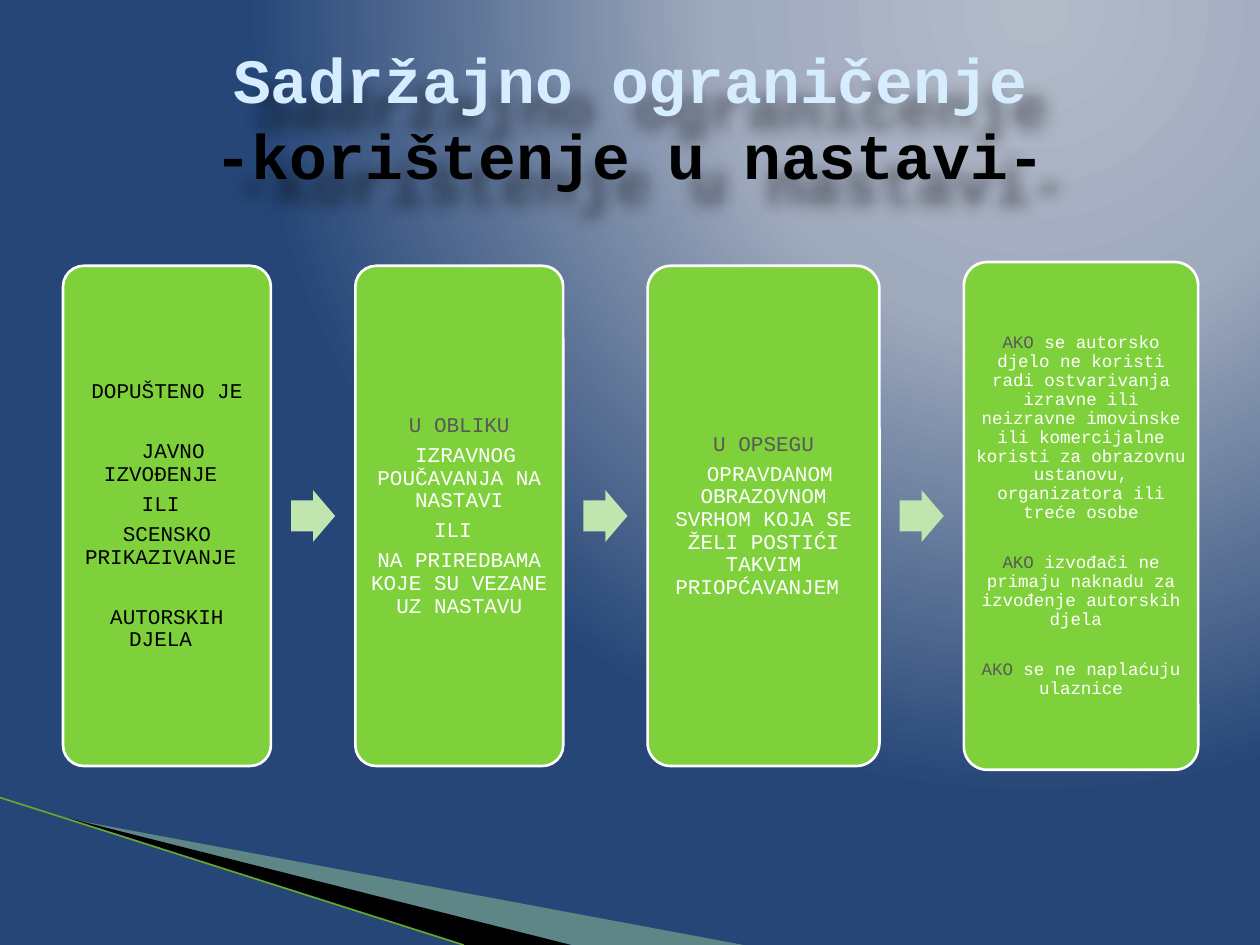
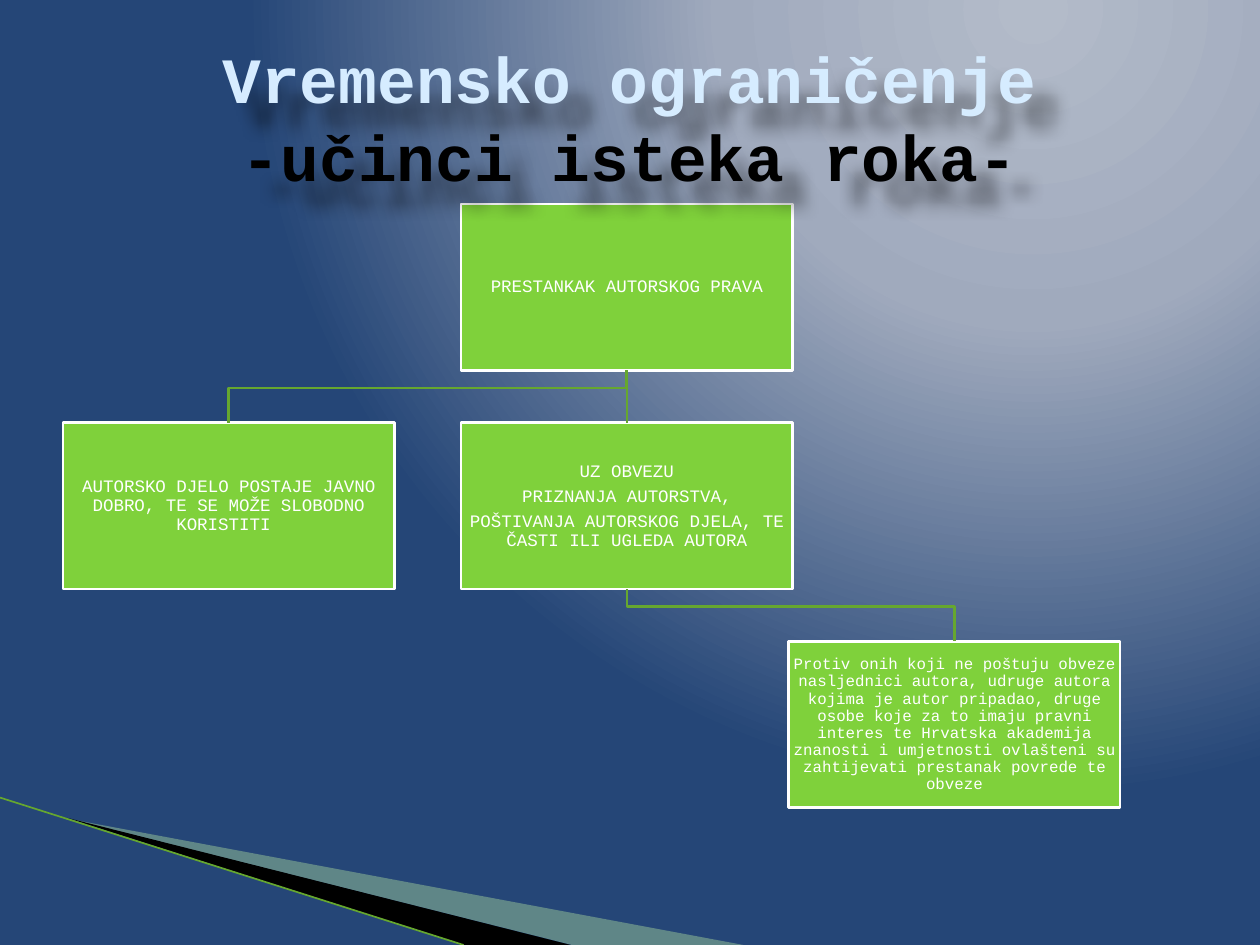
from dataclasses import dataclass
from typing import NamedTuple

from lxml.etree import SubElement
from pptx import Presentation
from pptx.dml.color import RGBColor
from pptx.enum.shapes import MSO_CONNECTOR as Connector, MSO_SHAPE as Preset
from pptx.enum.text import MSO_ANCHOR as Anchor, PP_ALIGN as Align
from pptx.oxml.ns import qn
from pptx.util import Emu, Inches, Pt


@dataclass(frozen=True)
class Theme:
    """Colours, font and type sizes of the deck."""

    font: str = "Courier New"
    sky: str = "D6ECFF"
    black: str = "000000"
    white: str = "FFFFFF"
    grey: str = "595959"
    green: str = "7FD13B"
    dark_green: str = "66A72F"
    pale_green: str = "B8E7A1"
    arrow_green: str = "C0E5AF"
    backdrop: tuple = ((0, "B3BBC9"), (40, "A0AABD"), (100, "254677"))
    body: float = 12
    small: float = 10
    tiny: float = 9
    outline: float = 1.5
    hairline: float = 0.95
    paragraph_gap: float = 0.35
    section_gap: float = 1.43


THEME = Theme()
SLIDE_WIDTH, SLIDE_HEIGHT = Inches(10), Inches(7.5)
COLUMN, ROW = SLIDE_WIDTH / 100, SLIDE_HEIGHT / 75


class Box(NamedTuple):
    """A place on the grid, in columns and rows."""

    left: float
    top: float
    width: float
    height: float

    def emu(self) -> tuple:
        """Return the place as slide lengths."""
        return (*point(self.left, self.top), *point(self.width, self.height))


class Run(NamedTuple):
    """A piece of text in one colour."""

    text: str
    color: str


@dataclass(frozen=True)
class Line:
    """A paragraph, optionally opening a new section."""

    runs: tuple
    section: bool = False


@dataclass(frozen=True)
class Card:
    """A step of the process row."""

    width: float
    height: float
    lines: tuple
    size: float = THEME.body
    inset: float = 0.05


@dataclass(frozen=True)
class Node:
    """A box of the hierarchy, placed by left column and level."""

    left: float
    level: int
    lines: tuple
    size: float = THEME.small


def plain(text: str, color: str = THEME.white, section: bool = False) -> Line:
    """Make a paragraph of one colour."""
    return Line((Run(text, color),), section)


def condition(text: str, section: bool = True) -> Line:
    """Make a paragraph that opens with a grey keyword."""
    return Line((Run("AKO", THEME.grey), Run(text, THEME.white)), section)


CARD_LEFT, CARD_MIDDLE, CARD_GAP, CARD_CORNER = 5, 40.95, 6.7, 0.1
ARROW_WIDTH, ARROW_HEIGHT = 3.5, 4.1
CARDS = (
    Card(16.5, 39.7, (
        plain("DOPUŠTENO JE", THEME.black),
        plain(" JAVNO IZVOĐENJE ", THEME.black, section=True),
        plain("ILI ", THEME.black),
        plain("SCENSKO PRIKAZIVANJE ", THEME.black),
        plain("AUTORSKIH DJELA ", THEME.black, section=True),
    )),
    Card(16.5, 39.7, (
        plain("U OBLIKU", THEME.grey),
        plain(" IZRAVNOG POUČAVANJA NA NASTAVI"),
        plain("ILI "),
        plain("NA PRIREDBAMA KOJE SU VEZANE UZ NASTAVU"),
    )),
    Card(18.4, 39.7, (
        plain("U OPSEGU", THEME.grey),
        plain(" OPRAVDANOM OBRAZOVNOM SVRHOM KOJA SE ŽELI POSTIĆI TAKVIM PRIOPĆAVANJEM "),
    )),
    Card(18.6, 40.3, (
        condition(" se autorsko djelo ne koristi radi ostvarivanja izravne ili neizravne "
                  "imovinske ili komercijalne koristi za obrazovnu ustanovu, "
                  "organizatora ili treće osobe", section=False),
        condition(" izvođači ne primaju naknadu za izvođenje autorskih djela "),
        condition(" se ne naplaćuju ulaznice"),
    ), THEME.small, 0.04),
)

NODE_WIDTH, NODE_HEIGHT, NODE_TOP, LEVEL_STEP = 26.3, 13.2, 16.2, 17.35
NODES = {
    "end": Node(36.6, 0, (plain("PRESTANKAK AUTORSKOG PRAVA"),)),
    "public": Node(5, 1, (
        plain("AUTORSKO DJELO POSTAJE JAVNO DOBRO, TE SE MOŽE SLOBODNO KORISTITI "),
    )),
    "duty": Node(36.6, 1, (
        plain("UZ OBVEZU"),
        plain(" PRIZNANJA AUTORSTVA, "),
        plain("POŠTIVANJA AUTORSKOG DJELA, TE ČASTI ILI UGLEDA AUTORA"),
    )),
    "breach": Node(62.6, 2, (
        plain("Protiv onih koji ne poštuju obveze nasljednici autora, udruge autora kojima "
              "je autor pripadao, druge osobe koje za to imaju pravni interes te Hrvatska "
              "akademija znanosti i umjetnosti ovlašteni su zahtijevati prestanak povrede "
              "te obveze"),
    ), THEME.tiny),
}
LINKS = (("duty", "breach"), ("end", "duty"), ("end", "public"))


def point(column: float, row: float) -> tuple:
    """Turn a grid position into slide lengths."""
    return Emu(round(column * COLUMN)), Emu(round(row * ROW))


def paint(shape, fill: str = "", line: str = "", weight: float = THEME.outline) -> None:
    """Set fill and outline and remove the shadow."""
    shape.shadow.inherit = False
    if fill:
        shape.fill.solid()
        shape.fill.fore_color.rgb = RGBColor.from_string(fill)
    else:
        shape.fill.background()
    if line:
        shape.line.color.rgb = RGBColor.from_string(line)
        shape.line.width = Pt(weight)
    else:
        shape.line.fill.background()


def write(shape, lines: tuple, *, size: float, bold: bool = False, inset: float = 0.1,
          leading: float = 1, gap: float = 0) -> None:
    """Fill a shape with centred paragraphs."""
    frame = shape.text_frame
    frame.word_wrap = True
    frame.vertical_anchor = Anchor.MIDDLE
    frame.margin_left = frame.margin_right = Inches(inset)
    frame.margin_top = frame.margin_bottom = Inches(min(inset, 0.05))
    for index, line in enumerate(lines):
        paragraph = frame.add_paragraph() if index else frame.paragraphs[0]
        paragraph.alignment = Align.CENTER
        paragraph.line_spacing = leading
        paragraph.space_after = Pt(gap * size)
        if line.section:
            paragraph.space_before = Pt(THEME.section_gap * size)
        for part in line.runs:
            if part.text == "\n":
                paragraph.add_line_break()
                continue
            run = paragraph.add_run()
            run.text = part.text
            run.font.name = THEME.font
            run.font.size = Pt(size)
            run.font.bold = bold
            run.font.color.rgb = RGBColor.from_string(part.color)


def add_block(slide, preset: Preset, box: Box, lines: tuple, size: float, inset: float):
    """Draw a green block with white outline and text."""
    block = slide.shapes.add_shape(preset, *box.emu())
    paint(block, THEME.green, THEME.white)
    write(block, lines, size=size, inset=inset, leading=0.9, gap=THEME.paragraph_gap)
    return block


def add_outline(slide, points: tuple, closed: bool):
    """Draw a freeform through grid points."""
    first, *rest = (point(*place) for place in points)
    builder = slide.shapes.build_freeform(*first)
    builder.add_line_segments(rest, close=closed)
    return builder.convert_to_shape()


def add_straight(slide, start: tuple, end: tuple, weight: float):
    """Draw a straight dark green line between grid points."""
    line = slide.shapes.add_connector(Connector.STRAIGHT, *point(*start), *point(*end))
    line.line.color.rgb = RGBColor.from_string(THEME.dark_green)
    line.line.width = Pt(weight)
    SubElement(line.element.spPr, qn("a:effectLst"))
    return line


def add_backdrop(slide) -> None:
    """Set the radial background and the corner wedges."""
    slide.background.fill.gradient()
    gradient = next(slide.element.iter(qn("a:gradFill")))
    gradient.clear()
    stops = SubElement(gradient, qn("a:gsLst"))
    for position, color in THEME.backdrop:
        stop = SubElement(stops, qn("a:gs"), pos=str(position * 1000))
        SubElement(stop, qn("a:srgbClr"), val=color)
    circle = SubElement(gradient, qn("a:path"), path="circle")
    SubElement(circle, qn("a:fillToRect"), l="65000", t="0", r="0", b="98000")

    pale = add_outline(slide, ((5.5, 65), (59, 75), (45.4, 75)), True)
    paint(pale, THEME.pale_green)
    SubElement(next(pale.element.iter(qn("a:srgbClr"))), qn("a:alpha"), val="40000")
    paint(add_outline(slide, ((5.3, 64.9), (45.3, 75), (36.8, 75)), True), THEME.black)
    add_straight(slide, (0, 63.3), (36.8, 75), THEME.hairline)


def add_title(slide, heading: str, subheading: str, size: float) -> None:
    """Write the two-line title with its soft shadow."""
    title = slide.shapes.add_textbox(*Box(5, 3, 90, 12.5).emu())
    runs = (Run(heading, THEME.sky), Run("\n", THEME.sky), Run(subheading, THEME.black))
    write(title, (Line(runs),), size=size, bold=True)
    title.shadow.inherit = False
    effects = next(title.element.iter(qn("a:effectLst")))
    shadow = SubElement(effects, qn("a:outerShdw"), blurRad=str(Inches(0.12)),
                        dist=str(Inches(0.25)), dir="3000000", algn="tl", rotWithShape="0")
    color = SubElement(shadow, qn("a:srgbClr"), val=THEME.black)
    SubElement(color, qn("a:alpha"), val="45000")


def add_process(slide) -> None:
    """Lay out the cards from left to right with arrows between."""
    left = CARD_LEFT
    for index, card in enumerate(CARDS):
        if index:
            arrow_left = left - (CARD_GAP + ARROW_WIDTH) / 2
            box = Box(arrow_left, CARD_MIDDLE - ARROW_HEIGHT / 2, ARROW_WIDTH, ARROW_HEIGHT)
            arrow = slide.shapes.add_shape(Preset.RIGHT_ARROW, *box.emu())
            arrow.adjustments[0], arrow.adjustments[1] = 0.6, 0.5
            paint(arrow, THEME.arrow_green)
        box = Box(left, CARD_MIDDLE - card.height / 2, card.width, card.height)
        block = add_block(slide, Preset.ROUNDED_RECTANGLE, box, card.lines, card.size, card.inset)
        block.adjustments[0] = CARD_CORNER
        left += card.width + CARD_GAP


def add_hierarchy(slide) -> None:
    """Draw the boxes of the hierarchy and the links between levels."""
    blocks = {}
    for name, node in NODES.items():
        box = Box(node.left, NODE_TOP + node.level * LEVEL_STEP, NODE_WIDTH, NODE_HEIGHT)
        blocks[name] = add_block(slide, Preset.RECTANGLE, box, node.lines, node.size, 0.01)
    for parent, child in LINKS:
        start = NODES[parent].left + NODE_WIDTH / 2
        end = NODES[child].left + NODE_WIDTH / 2
        top = NODE_TOP + NODES[parent].level * LEVEL_STEP + NODE_HEIGHT
        bottom = NODE_TOP + NODES[child].level * LEVEL_STEP
        if start == end:
            link = add_straight(slide, (start, top), (end, bottom), THEME.outline)
            link.begin_connect(blocks[parent], 2)
            link.end_connect(blocks[child], 0)
        else:
            bend = top + (bottom - top) / 3
            route = ((start, top), (start, bend), (end, bend), (end, bottom))
            paint(add_outline(slide, route, False), line=THEME.dark_green)


def main() -> None:
    """Build both slides and save the deck."""
    presentation = Presentation()
    presentation.slide_width, presentation.slide_height = SLIDE_WIDTH, SLIDE_HEIGHT
    contents = (
        (add_process, "Sadržajno ograničenje", "-korištenje u nastavi-", 36),
        (add_hierarchy, "Vremensko ograničenje", "-učinci isteka roka-", 36.9),
    )
    for add_content, heading, subheading, size in contents:
        slide = presentation.slides.add_slide(presentation.slide_layouts[6])
        add_backdrop(slide)
        add_content(slide)
        add_title(slide, heading, subheading, size)
    presentation.save("out.pptx")


if __name__ == "__main__":
    main()
